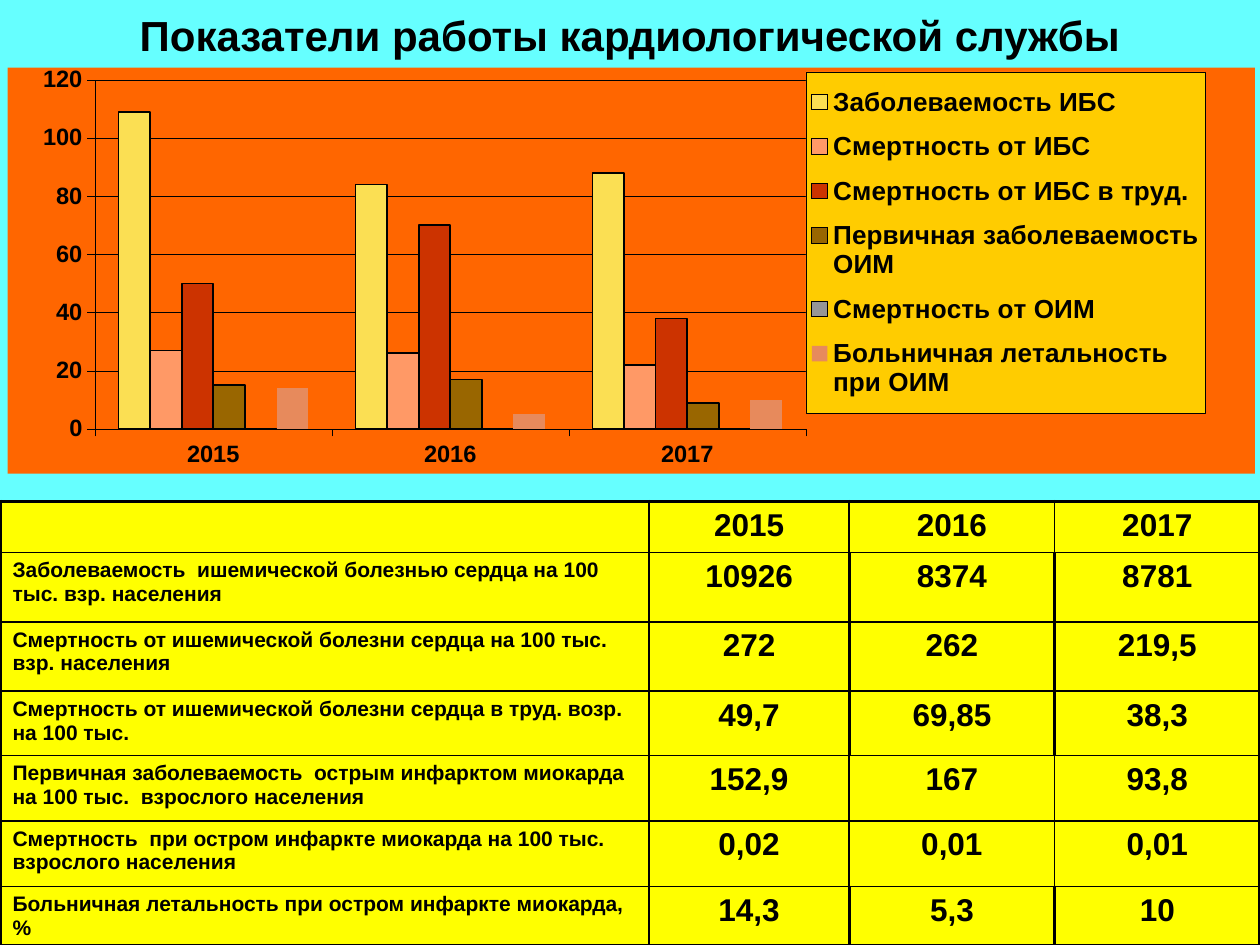
"""Build a slide with a chart and a table of cardiology service indicators."""
from typing import NamedTuple, Optional

from pptx import Presentation
from pptx.chart.data import CategoryChartData
from pptx.dml.color import RGBColor
from pptx.enum.chart import XL_CHART_TYPE, XL_LEGEND_POSITION, XL_TICK_LABEL_POSITION, XL_TICK_MARK
from pptx.enum.text import MSO_ANCHOR, PP_ALIGN
from pptx.oxml import parse_xml
from pptx.oxml.ns import nsdecls
from pptx.util import Inches, Pt

FONT = "Arial"
COLORS = {
    "background": "66FFFF", "ink": "000000", "chart": "FF6600", "legend": "FFCC00",
    "cell": "FFFF00", "yellow": "FBDF53", "peach": "FF9966", "red": "CC3300",
    "brown": "996600", "grey": "969696", "salmon": "E78A5C",
}
YEARS = ("2015", "2016", "2017")
THIN, THICK = 1, 2.25
COLUMN_WIDTHS = (5.15, 1.59, 1.63, 1.63)


class Indicator(NamedTuple):
    """One measure, as a chart series and as a table row."""
    series: str
    plotted: tuple[int, ...]
    color: str
    label: str
    figures: tuple[str, ...]
    height: float
    outlined: bool = True
    thick_dividers: bool = True


class Layout(NamedTuple):
    """Fractions of the chart area."""
    x: float
    y: float
    w: float
    h: float


INDICATORS = (
    Indicator("Заболеваемость ИБС", (109, 84, 88), "yellow",
              "Заболеваемость  ишемической болезнью сердца на 100 тыс. взр. населения",
              ("10926", "8374", "8781"), 0.55),
    Indicator("Смертность от ИБС", (27, 26, 22), "peach",
              "Смертность от ишемической болезни сердца на 100 тыс. взр. населения",
              ("272", "262", "219,5"), 0.55),
    Indicator("Смертность от ИБС в труд.", (50, 70, 38), "red",
              "Смертность от ишемической болезни сердца в труд. возр. на 100 тыс.",
              ("49,7", "69,85", "38,3"), 0.51),
    Indicator("Первичная заболеваемость ОИМ", (15, 17, 9), "brown",
              "Первичная заболеваемость  острым инфарктом миокарда на 100 тыс.  взрослого населения",
              ("152,9", "167", "93,8"), 0.52, thick_dividers=False),
    Indicator("Смертность от ОИМ", (0, 0, 0), "grey",
              "Смертность  при остром инфаркте миокарда на 100 тыс.  взрослого населения",
              ("0,02", "0,01", "0,01"), 0.52, thick_dividers=False),
    Indicator("Больничная летальность при ОИМ", (14, 5, 10), "salmon",
              "Больничная летальность при остром инфаркте миокарда, %",
              ("14,3", "5,3", "10"), 0.4, outlined=False),
)


def rgb(name: str) -> RGBColor:
    """Look up a palette colour."""
    return RGBColor.from_string(COLORS[name])


def set_font(font, size: float) -> None:
    """Apply the bold black face used throughout."""
    font.name, font.size, font.bold = FONT, Pt(size), True
    font.color.rgb = rgb("ink")


def write_text(frame, text: str, *, size: float, align: Optional[PP_ALIGN] = None) -> None:
    """Write one formatted paragraph."""
    paragraph = frame.paragraphs[0]
    paragraph.alignment = align
    run = paragraph.add_run()
    run.text = text
    set_font(run.font, size)


def set_line(line, width: float) -> None:
    """Give a line its black colour and its width."""
    line.color.rgb = rgb("ink")
    line.width = Pt(width)


def layout_xml(layout: Layout, inner: bool = False):
    """Return a manual chart layout element."""
    target = '<c:layoutTarget val="inner"/>' if inner else ""
    modes = "".join(f'<c:{axis}Mode val="edge"/>' for axis in "xy")
    sizes = "".join(f'<c:{key} val="{value}"/>' for key, value in layout._asdict().items())
    return parse_xml(f'<c:layout {nsdecls("c")}><c:manualLayout>{target}{modes}{sizes}'
                     '</c:manualLayout></c:layout>')


def area_xml(fill: str, line: str):
    """Return chart shape properties with a solid fill and the given line content."""
    return parse_xml(f'<c:spPr {nsdecls("c", "a")}><a:solidFill><a:srgbClr val="{COLORS[fill]}"/>'
                     f'</a:solidFill><a:ln w="3175">{line}</a:ln></c:spPr>')


def add_indicator_chart(slide) -> None:
    """Add the clustered column chart with its legend."""
    data = CategoryChartData()
    data.categories = YEARS
    for indicator in INDICATORS:
        data.add_series(indicator.series, indicator.plotted)
    chart = slide.shapes.add_chart(XL_CHART_TYPE.COLUMN_CLUSTERED, Inches(0.06), Inches(0.53),
                                   Inches(9.9), Inches(3.23), data).chart
    set_font(chart.font, 13.5)
    chart.has_title = False

    plot = chart.plots[0]
    plot.gap_width, plot.overlap, plot.vary_by_categories = 150, 0, False
    for series, indicator in zip(plot.series, INDICATORS):
        series.format.fill.solid()
        series.format.fill.fore_color.rgb = rgb(indicator.color)
        if indicator.outlined:
            set_line(series.format.line, 0.96)
        else:
            series.format.line.fill.background()

    for axis in (chart.category_axis, chart.value_axis):
        axis.major_tick_mark, axis.minor_tick_mark = XL_TICK_MARK.OUTSIDE, XL_TICK_MARK.NONE
        set_font(axis.tick_labels.font, 13.5)
        set_line(axis.format.line, 0.25)
    chart.category_axis.tick_label_position = XL_TICK_LABEL_POSITION.LOW
    values = chart.value_axis
    values.minimum_scale, values.maximum_scale, values.major_unit = 0, 120, 20
    values.has_major_gridlines = True
    set_line(values.major_gridlines.format.line, 0.25)

    chart.has_legend = True
    chart.legend.position = XL_LEGEND_POSITION.RIGHT
    chart.legend.include_in_layout = False
    set_font(chart.legend.font, 14.9)
    space = chart.element
    overlay = space.xpath("c:chart/c:legend/c:overlay")[0]
    overlay.addprevious(layout_xml(Layout(0.64, 0.01, 0.32, 0.84)))
    black = f'<a:solidFill><a:srgbClr val="{COLORS["ink"]}"/></a:solidFill>'
    overlay.addnext(area_xml("legend", black))

    plot_area = space.xpath("c:chart/c:plotArea")[0]
    for automatic in plot_area.xpath("c:layout"):
        plot_area.remove(automatic)
    plot_area.insert(0, layout_xml(Layout(0.07, 0.03, 0.57, 0.86), inner=True))
    space.xpath("c:chart")[0].addnext(area_xml("chart", "<a:noFill/>"))


def style_cell(cell, **borders: float) -> None:
    """Fill a cell and draw its borders, given as L, R, T and B widths."""
    properties = cell._tc.get_or_add_tcPr()
    for side, width in borders.items():
        properties.append(parse_xml(
            f'<a:ln{side} {nsdecls("a")} w="{Pt(width)}"><a:solidFill>'
            f'<a:srgbClr val="{COLORS["ink"]}"/></a:solidFill></a:ln{side}>'))
    cell.fill.solid()
    cell.fill.fore_color.rgb = rgb("cell")


def add_indicator_table(slide) -> None:
    """Add the table of figures by year."""
    rows = [("", *YEARS)] + [(item.label, *item.figures) for item in INDICATORS]
    heights = [0.4] + [item.height for item in INDICATORS]
    dividers = [THIN] + [THICK if item.thick_dividers else THIN for item in INDICATORS]
    table = slide.shapes.add_table(len(rows), len(COLUMN_WIDTHS), Inches(0), Inches(3.98),
                                   Inches(10), Inches(sum(heights))).table
    table.first_row = table.horz_banding = False
    for column, width in zip(table.columns, COLUMN_WIDTHS):
        column.width = Inches(width)
    for r, (texts, height, divider) in enumerate(zip(rows, heights, dividers)):
        table.rows[r].height = Inches(height)
        edges = (THICK, THIN, divider, divider, THICK)
        for c, text in enumerate(texts):
            cell = table.cell(r, c)
            style_cell(cell, L=edges[c], R=edges[c + 1], T=THIN if r else THICK,
                       B=THICK if r == len(rows) - 1 else THIN)
            if text:
                write_text(cell.text_frame, text, size=18 if c else 12,
                           align=PP_ALIGN.CENTER if c else PP_ALIGN.LEFT)


def main() -> None:
    """Build and save the presentation."""
    deck = Presentation()
    deck.slide_width, deck.slide_height = Inches(10), Inches(7.5)
    slide = deck.slides.add_slide(deck.slide_layouts[5])
    slide.background.fill.solid()
    slide.background.fill.fore_color.rgb = rgb("background")
    title = slide.shapes.title
    title.left, title.top, title.width, title.height = map(Inches, (0.5, 0, 9, 0.55))
    title.text_frame.vertical_anchor = MSO_ANCHOR.MIDDLE
    write_text(title.text_frame, "Показатели работы кардиологической службы", size=24,
               align=PP_ALIGN.CENTER)
    add_indicator_chart(slide)
    add_indicator_table(slide)
    deck.save("out.pptx")


if __name__ == "__main__":
    main()
